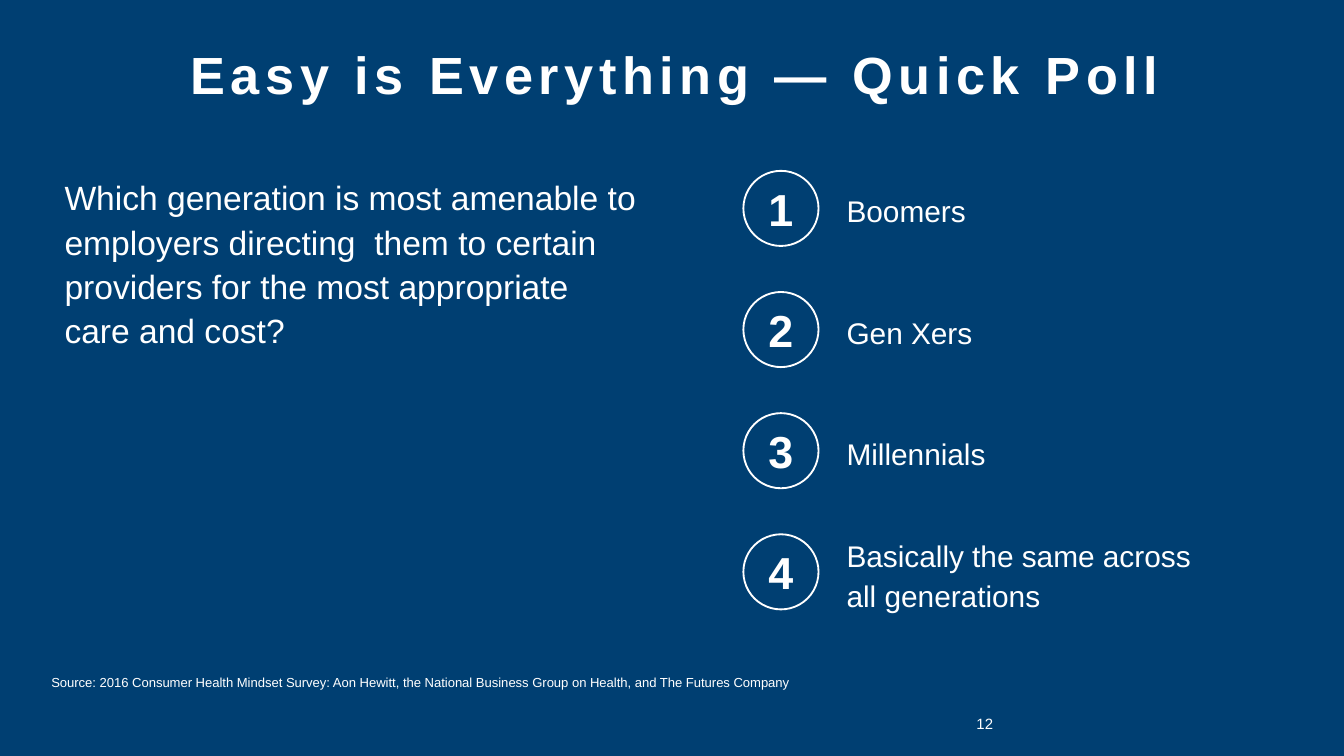
from pptx import Presentation
from pptx.dml.color import RGBColor
from pptx.enum.shapes import MSO_SHAPE as Shape
from pptx.enum.text import MSO_ANCHOR as Anchor, MSO_AUTO_SIZE as AutoSize, PP_ALIGN as Align
from pptx.util import Cm, Pt

WHITE, NAVY = "FFFFFF", "003F72"


def color(hex_code):
    return RGBColor.from_string(hex_code)


def write(shape, text, size, bold=False, align=Align.LEFT, anchor=Anchor.TOP,
          spacing=1.0, after=0, inset=None):
    """Fill a shape with one white paragraph and return its run."""
    frame = shape.text_frame
    frame.word_wrap = True
    frame.auto_size = AutoSize.NONE
    frame.vertical_anchor = anchor
    if inset is not None:
        frame.margin_left = frame.margin_right = inset
        frame.margin_top = frame.margin_bottom = inset
    para = frame.paragraphs[0]
    para.alignment = align
    para.line_spacing = spacing
    para.space_before = Pt(0)
    para.space_after = Pt(after)
    span = para.add_run()
    span.text = text
    span.font.name = "Arial"
    span.font.size = Pt(size)
    span.font.bold = bold
    span.font.color.rgb = color(WHITE)
    return span


deck = Presentation()
deck.slide_width, deck.slide_height = Cm(25.4), Cm(14.29)
page = deck.slides.add_slide(deck.slide_layouts.get_by_name("Title Only"))
page.background.fill.solid()
page.background.fill.fore_color.rgb = color(NAVY)

# Title
title = page.shapes.title
title.left, title.top, title.width, title.height = Cm(1.02), Cm(0.81), Cm(23.47), Cm(1.19)
heading = write(title, "Easy is Everything — Quick Poll", 28, bold=True,
                align=Align.CENTER, spacing=0.9)
heading._r.get_or_add_rPr().set("spc", "300")

# Question
question = page.shapes.add_textbox(Cm(0.97), Cm(3.15), Cm(11.3), Cm(3.58))
write(question, "Which generation is most amenable to employers directing  them to certain "
      "providers for the most appropriate care and cost?", 18, spacing=1.1, after=12)

# Numbered answers: text, offset of the label from its circle's top, label height
answers = [
    ("Boomers", 0.23, 0.94),
    ("Gen Xers", 0.23, 0.94),
    ("Millennials", 0.23, 0.94),
    ("Basically the same across all generations", -0.12, 1.75),
]
first_top, pitch, diameter = 3.23, 2.29, 1.42
for index, (answer, offset, height) in enumerate(answers):
    top = first_top + index * pitch
    circle = page.shapes.add_shape(Shape.OVAL, Cm(14.05), Cm(top), Cm(diameter), Cm(diameter))
    circle.shadow.inherit = False
    circle.fill.background()
    circle.line.color.rgb = color(WHITE)
    circle.line.width = Pt(1)
    write(circle, str(index + 1), 24, bold=True, align=Align.CENTER,
          anchor=Anchor.MIDDLE, inset=Cm(0.13))
    label = page.shapes.add_textbox(Cm(15.75), Cm(top + offset), Cm(7.26), Cm(height))
    write(label, answer, 16, spacing=1.1, after=6)

# Source and page number
source = page.shapes.add_textbox(Cm(0.97), Cm(12.75), Cm(15.49), Cm(0.48))
write(source, "Source: 2016 Consumer Health Mindset Survey: Aon Hewitt, the National Business "
      "Group on Health, and The Futures Company", 7, inset=0)
number = page.shapes.add_textbox(Cm(17.78), Cm(13.51), Cm(0.99), Cm(0.33))
write(number, "12", 8, align=Align.RIGHT, anchor=Anchor.BOTTOM, inset=0)

deck.save("out.pptx")
